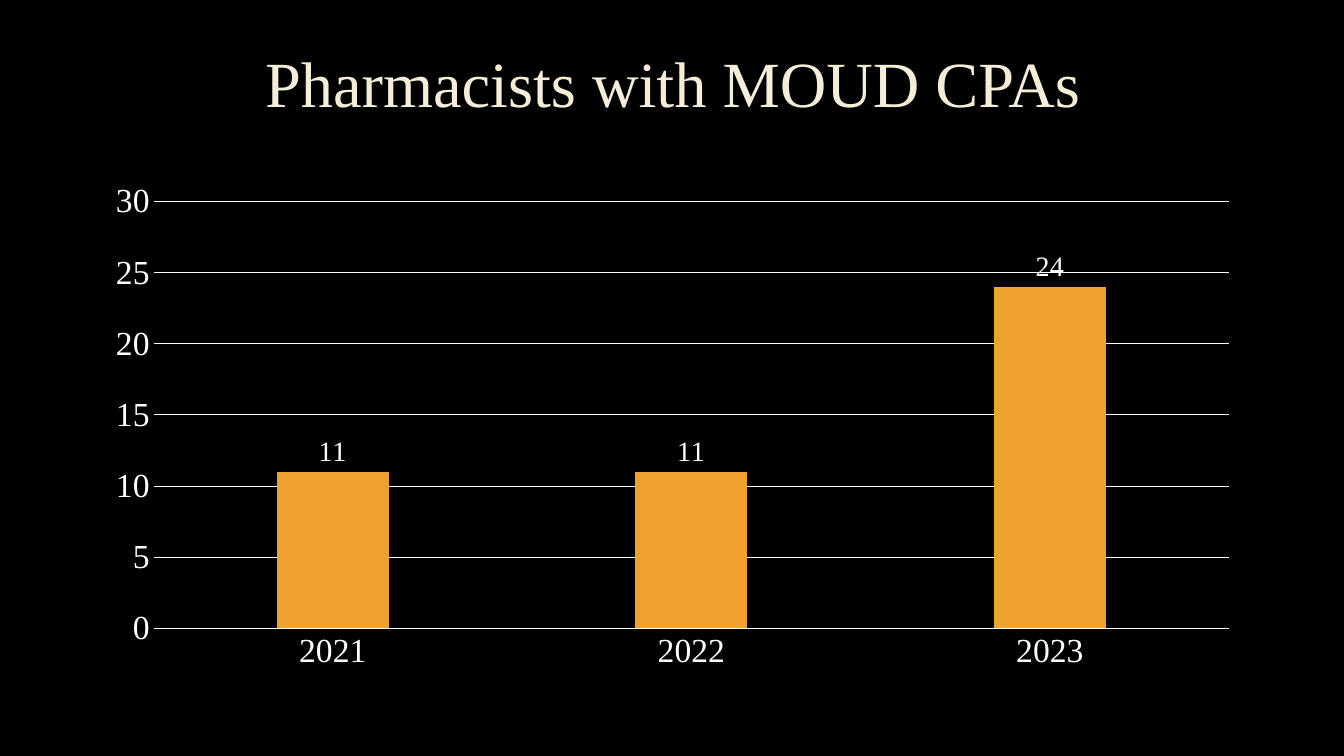
from pptx import Presentation
from pptx.chart.data import CategoryChartData
from pptx.dml.color import RGBColor
from pptx.enum.chart import XL_CHART_TYPE, XL_LABEL_POSITION, XL_TICK_MARK
from pptx.enum.text import MSO_ANCHOR, PP_ALIGN
from pptx.util import Inches, Pt

# Content
TITLE = "Pharmacists with MOUD CPAs"
YEARS = ["2021", "2022", "2023"]
PHARMACISTS = [11, 11, 24]

FONT = "Times New Roman"
COLORS = {"background": "000000", "title": "F4EDD8", "text": "FFFFFF", "bar": "F0A22E"}
TITLE_BOX = (1.01, 0.17, 11.32, 1.38)
CHART_BOX = (0.92, 1.71, 11.5, 5.04)


def rgb(name):
    return RGBColor.from_string(COLORS[name])


def set_font(font, size, color):
    font.name = FONT
    font.size = Pt(size)
    font.bold = False
    font.color.rgb = rgb(color)


def set_line(line, color):
    line.color.rgb = rgb(color)
    line.width = Pt(0.75)


prs = Presentation()
prs.slide_width, prs.slide_height = Inches(13.33), Inches(7.5)
s = prs.slides.add_slide(prs.slide_layouts[5])
s.background.fill.solid()
s.background.fill.fore_color.rgb = rgb("background")

# Title
title = s.shapes.title
title.left, title.top, title.width, title.height = map(Inches, TITLE_BOX)
tf = title.text_frame
tf.text = TITLE
tf.word_wrap = True
tf.vertical_anchor = MSO_ANCHOR.MIDDLE
p = tf.paragraphs[0]
p.alignment = PP_ALIGN.CENTER
p.line_spacing = 0.9
set_font(p.runs[0].font, 46, "title")

# Column chart
data = CategoryChartData()
data.categories = YEARS
data.add_series("Series 1", PHARMACISTS)
chart = s.shapes.add_chart(
    XL_CHART_TYPE.COLUMN_CLUSTERED, *map(Inches, CHART_BOX), data
).chart
chart.has_title = False
chart.has_legend = False
set_font(chart.font, 10, "text")

# Axes
for axis in (chart.category_axis, chart.value_axis):
    axis.major_tick_mark = axis.minor_tick_mark = XL_TICK_MARK.NONE
    set_font(axis.tick_labels.font, 24, "text")
set_line(chart.category_axis.format.line, "text")
val_axis = chart.value_axis
val_axis.minimum_scale, val_axis.maximum_scale, val_axis.major_unit = 0, 30, 5
val_axis.format.line.fill.background()
val_axis.has_major_gridlines = True
set_line(val_axis.major_gridlines.format.line, "text")

# Bars and value labels
plot = chart.plots[0]
plot.vary_by_categories = False
plot.gap_width, plot.overlap = 219, -27
bars = plot.series[0]
bars.format.fill.solid()
bars.format.fill.fore_color.rgb = rgb("bar")
labels = bars.data_labels
labels.show_value = True
labels.position = XL_LABEL_POSITION.OUTSIDE_END
set_font(labels.font, 20, "text")

prs.save("out.pptx")
